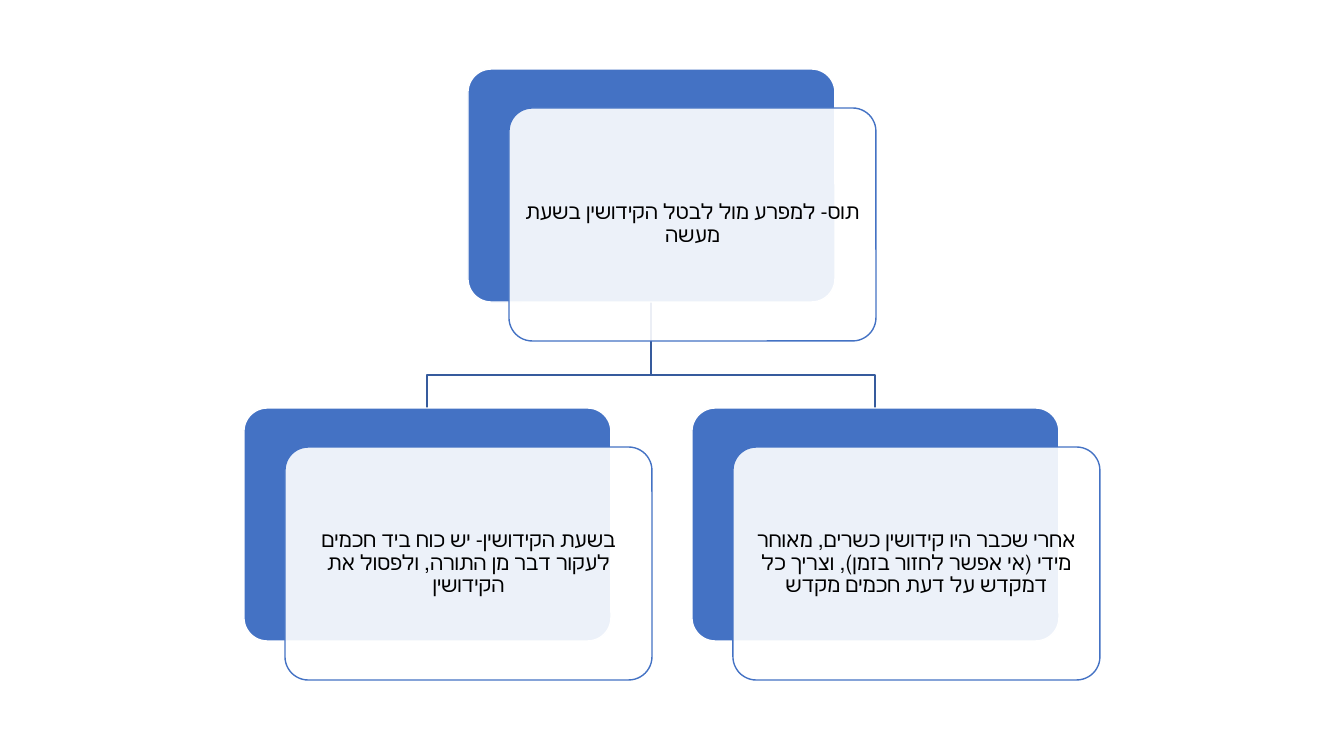
from lxml import etree
from pptx import Presentation
from pptx.dml.color import RGBColor
from pptx.enum.shapes import MSO_SHAPE
from pptx.enum.text import MSO_ANCHOR, PP_ALIGN
from pptx.oxml.ns import qn
from pptx.util import Emu, Pt

ROUNDED = MSO_SHAPE.ROUNDED_RECTANGLE
MIDDLE = MSO_ANCHOR.MIDDLE
CENTER = PP_ALIGN.CENTER

PAGE_WIDTH, PAGE_HEIGHT = 1344, 756
SCALE = 12192000 / PAGE_WIDTH
CARD_WIDTH, CARD_HEIGHT = 367, 233
SHIFT_X, SHIFT_Y = 41, 39
PADDING = 7
INSET = 6
PARENT_LEFT, PARENT_TOP = 468, 69
CHILD_TOP = 408
CHILD_SHIFT = 224
BEND_Y = 375

COLORS = {"blue": "4472C4", "line": "365B9D", "white": "FFFFFF", "text": "000000"}

PARENT_TEXT = "תוס- למפרע מול לבטל הקידושין בשעת מעשה"
CHILD_TEXTS = [
    "בשעת הקידושין- יש כוח ביד חכמים לעקור דבר מן התורה, ולפסול את הקידושין",
    "אחרי שכבר היו קידושין כשרים, מאוחר מידי (אי אפשר לחזור בזמן), וצריך כל דמקדש על דעת חכמים מקדש",
]


def px(length):
    return Emu(round(length * SCALE))


def color(name):
    return RGBColor.from_string(COLORS[name])


def apply(target, values):
    for name, value in values.items():
        setattr(target, name, value)


class Diagram:
    frame_format = {
        "word_wrap": True,
        "vertical_anchor": MIDDLE,
        "margin_left": px(INSET),
        "margin_right": px(INSET),
        "margin_top": px(INSET),
        "margin_bottom": px(INSET),
    }
    para_format = {"alignment": CENTER, "line_spacing": 0.9, "space_after": Pt(5)}
    font_format = {"name": "Calibri", "size": Pt(15)}

    def __init__(self, page):
        self.page = page

    def outline(self, shape, line):
        shape.shadow.inherit = False
        shape.line.color.rgb = color(line)
        shape.line.width = Pt(1)

    def branch(self, points):
        start, *rest = [(px(x), px(y)) for x, y in points]
        builder = self.page.shapes.build_freeform(*start, scale=1.0)
        builder.add_line_segments(rest, close=False)
        shape = builder.convert_to_shape()
        shape.fill.background()
        self.outline(shape, "line")

    def panel(self, left, top, fill, line, opacity=100):
        shape = self.page.shapes.add_shape(
            ROUNDED, px(left), px(top), px(CARD_WIDTH), px(CARD_HEIGHT))
        shape.adjustments[0] = 0.1
        shape.fill.solid()
        shape.fill.fore_color.rgb = color(fill)
        self.outline(shape, line)
        if opacity < 100:
            tint = shape.fill._xPr.find(qn("a:solidFill"))[0]
            etree.SubElement(tint, qn("a:alpha"), val=str(opacity * 1000))

    def label(self, left, top, text):
        box = self.page.shapes.add_textbox(
            px(left), px(top),
            px(CARD_WIDTH - 2 * PADDING), px(CARD_HEIGHT - 2 * PADDING))
        apply(box.text_frame, self.frame_format)
        para = box.text_frame.paragraphs[0]
        apply(para, self.para_format)
        para._p.get_or_add_pPr().set("rtl", "1")
        span = para.add_run()
        span.text = text
        apply(span.font, self.font_format)
        span.font.color.rgb = color("text")

    def card(self, left, top, text):
        front_left, front_top = left + SHIFT_X, top + SHIFT_Y
        self.panel(left, top, "blue", "white")
        self.panel(front_left, front_top, "white", "blue", 90)
        self.label(front_left + PADDING, front_top + PADDING, text)


def main():
    deck = Presentation()
    deck.slide_width, deck.slide_height = px(PAGE_WIDTH), px(PAGE_HEIGHT)
    diagram = Diagram(deck.slides.add_slide(deck.slide_layouts[6]))

    trunk_x = PARENT_LEFT + CARD_WIDTH // 2
    child_shifts = [-CHILD_SHIFT, CHILD_SHIFT]
    for shift in reversed(child_shifts):
        diagram.branch([
            (trunk_x, PARENT_TOP + CARD_HEIGHT),
            (trunk_x, BEND_Y),
            (trunk_x + shift, BEND_Y),
            (trunk_x + shift, CHILD_TOP),
        ])

    diagram.card(PARENT_LEFT, PARENT_TOP, PARENT_TEXT)
    for shift, text in zip(child_shifts, CHILD_TEXTS):
        diagram.card(PARENT_LEFT + shift, CHILD_TOP, text)

    deck.save("out.pptx")


if __name__ == "__main__":
    main()
